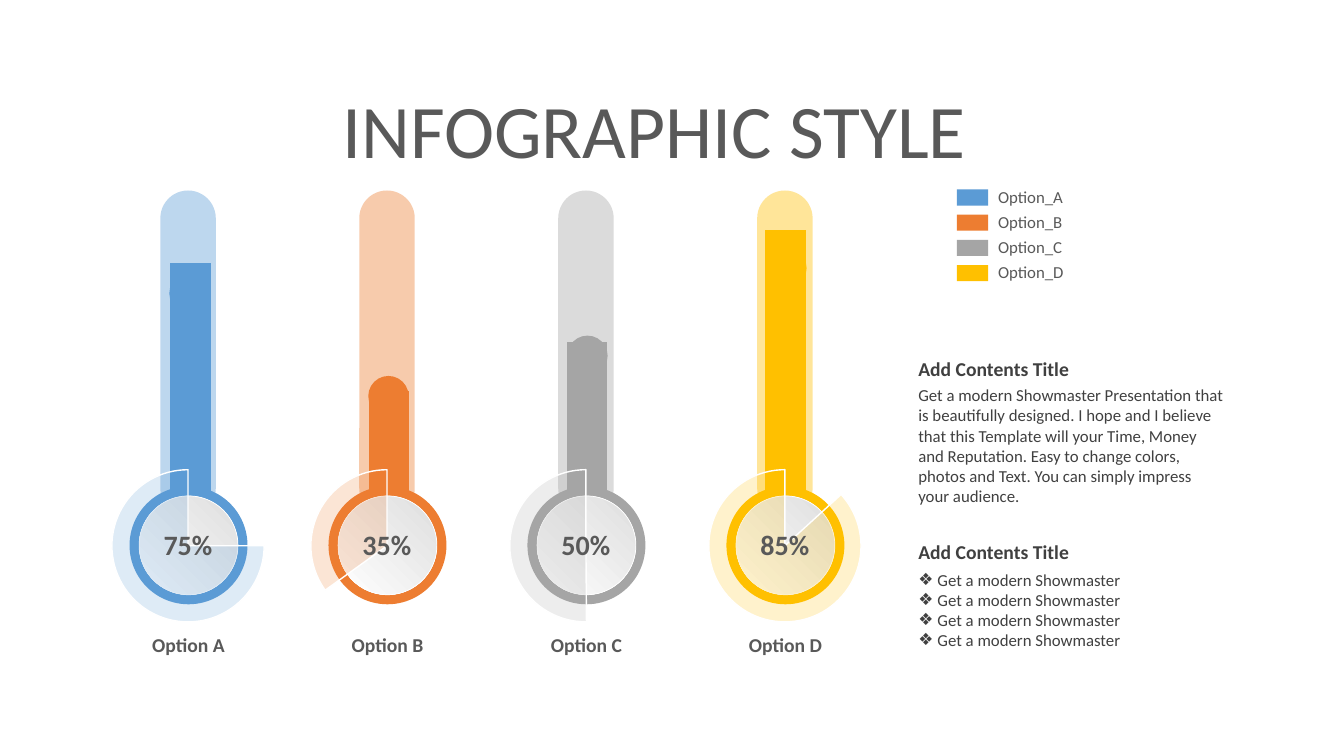
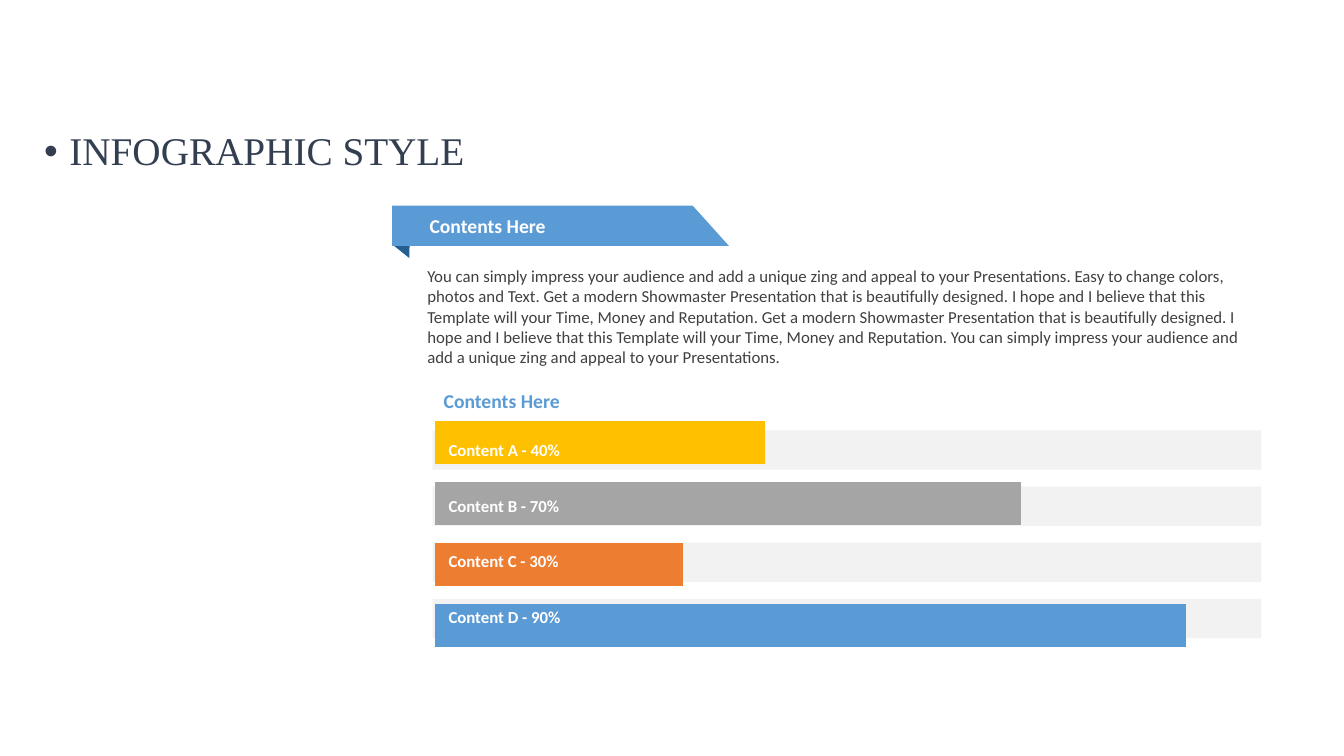
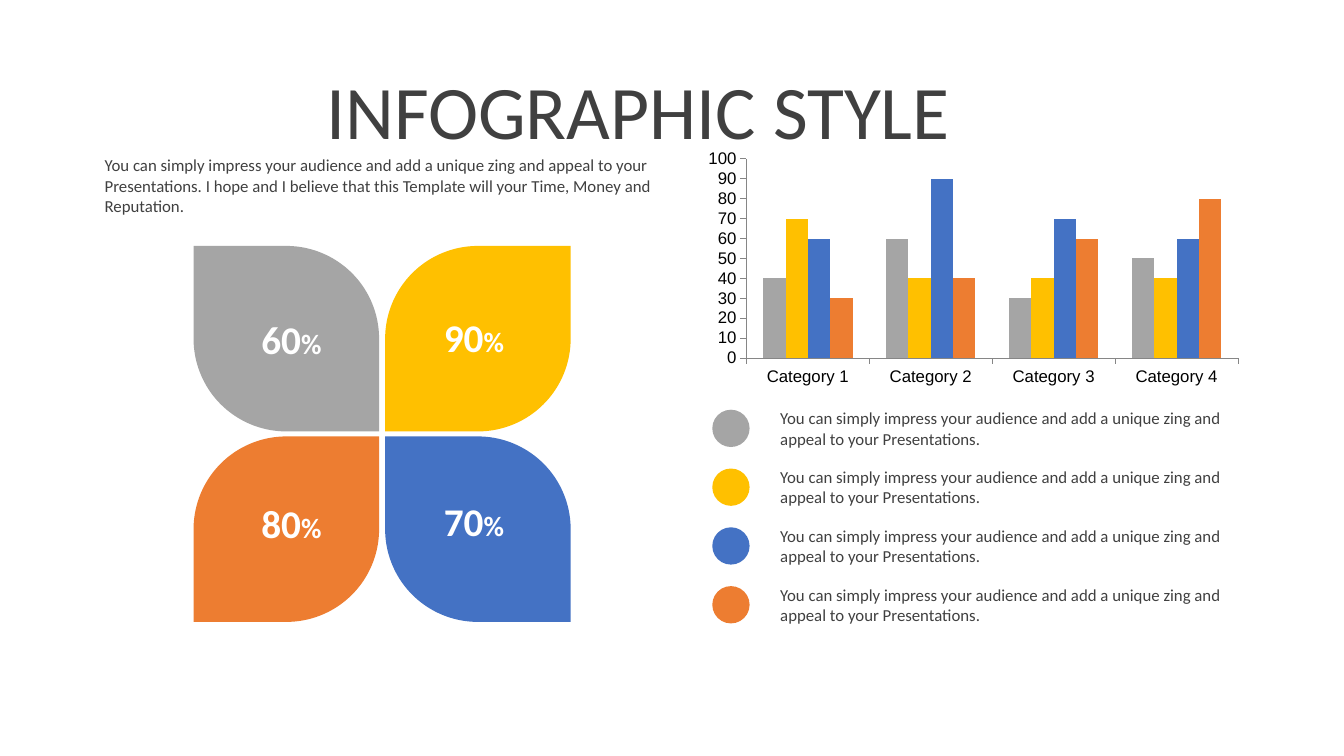
import pptx
import pptx.util
import pptx.chart.data
import pptx.dml.color
import pptx.enum.chart
import pptx.enum.shapes
import pptx.enum.text
import pptx.oxml.ns
from lxml import etree

RGB = pptx.dml.color.RGBColor
BLUE = RGB(0x5B, 0x9B, 0xD5)
ORANGE = RGB(0xED, 0x7D, 0x31)
GRAY = RGB(0xA5, 0xA5, 0xA5)
GOLD = RGB(0xFF, 0xC0, 0x00)
ROYAL = RGB(0x44, 0x72, 0xC4)
NAVY = RGB(0x25, 0x5E, 0x91)
SLATE = RGB(0x33, 0x3F, 0x50)
INK = RGB(0x40, 0x40, 0x40)
SOFT = RGB(0x59, 0x59, 0x59)
PALE = RGB(0xF2, 0xF2, 0xF2)
SILVER = RGB(0xDE, 0xDE, 0xDE)
RULE = RGB(0x86, 0x86, 0x86)
WHITE = RGB(0xFF, 0xFF, 0xFF)
BLACK = RGB(0, 0, 0)

SHAPE = pptx.enum.shapes.MSO_SHAPE
KIND = pptx.enum.chart.XL_CHART_TYPE
ALIGN = pptx.enum.text.PP_ALIGN
ANCHOR = pptx.enum.text.MSO_ANCHOR
inch = pptx.util.Inches
pt = pptx.util.Pt
qn = pptx.oxml.ns.qn

TITLE = "INFOGRAPHIC STYLE"
HEAD = "Add Contents Title"
ITEM = "Get a modern Showmaster"
HERE = "Contents Here"
IMPRESS = "You can simply impress your audience"
ZING = IMPRESS + " and add a unique zing and appeal to your Presentations."
EASY = "Easy to change colors, photos and Text."
MODERN = ITEM + " Presentation that is beautifully designed."
HOPE = "I hope and I believe that this Template will your Time, Money and Reputation."

TUBES = [
    ("A", "75%", BLUE, 88, 0, 2.71),
    ("B", "35%", ORANGE, 41, 144.3, 3.73),
    ("C", "50%", GRAY, 59, 89.6, 3.33),
    ("D", "85%", GOLD, 100, 317.6, 2.46),
]
BARS = [
    ("Content A - 40%", GOLD, 44),
    ("Content B - 70%", GRAY, 78),
    ("Content C - 30%", ORANGE, 33),
    ("Content D - 90%", BLUE, 100),
]
LEAVES = [("60", GRAY, 0, 0), ("90", GOLD, 1, 0), ("80", ORANGE, 0, 1), ("70", ROYAL, 1, 1)]
SERIES = [
    ("Series 1", GRAY, (40, 60, 30, 50)),
    ("Series 2", GOLD, (70, 40, 40, 40)),
    ("Series 3", ROYAL, (60, 90, 70, 60)),
    ("Series 4", ORANGE, (30, 40, 60, 80)),
]

deck = pptx.Presentation()
deck.slide_width, deck.slide_height = inch(13.33), inch(7.5)


def page():
    return deck.slides.add_slide(deck.slide_layouts[6])


def box(at):
    return [inch(n) for n in at]


def spread(first, last, count):
    return [first + (last - first) * i / (count - 1) for i in range(count)]


def text(slide, at, lines, size=12, color=INK, bold=False, center=False,
         middle=False, font="Calibri", bullet=None, indent=0, space=None, left=0.1):
    frame = slide.shapes.add_textbox(*box(at)).text_frame
    frame.word_wrap = True
    frame.margin_left = inch(left)
    frame.vertical_anchor = ANCHOR.MIDDLE if middle else ANCHOR.TOP
    for i, line in enumerate(lines):
        para = frame.paragraphs[0] if i == 0 else frame.add_paragraph()
        para.alignment = ALIGN.CENTER if center else ALIGN.LEFT
        if bullet:
            props = para._p.get_or_add_pPr()
            props.set("marL", str(inch(indent)))
            props.set("indent", str(-inch(indent)))
            etree.SubElement(props, qn("a:buFont")).set("typeface", "Arial")
            etree.SubElement(props, qn("a:buChar")).set("char", bullet)
        if space:
            para.line_spacing = space
        for part, big in ([(line, size)] if isinstance(line, str) else line):
            run = para.add_run()
            run.text = part
            run.font.name, run.font.size = font, pt(big)
            run.font.bold, run.font.color.rgb = bold, color


def paint(form, color, line=0, alpha=None):
    form.shadow.inherit = False
    form.fill.solid()
    form.fill.fore_color.rgb = color
    if alpha:
        tint = form.element.spPr.find(qn("a:solidFill")).find(qn("a:srgbClr"))
        etree.SubElement(tint, qn("a:alpha")).set("val", str(alpha * 1000))
    if line:
        form.line.color.rgb = WHITE
        form.line.width = pt(line)
    else:
        form.line.fill.background()
    return form


def shape(slide, kind, at, color, adjust=(), **style):
    form = slide.shapes.add_shape(kind, *box(at))
    for i, share in enumerate(adjust):
        form.adjustments[i] = share
    return paint(form, color, **style)


def disc(slide, x, y, size, color, **style):
    return shape(slide, SHAPE.OVAL, (x - size / 2, y - size / 2, size, size), color, **style)


def outline(slide, points, color):
    spots = [box(p) for p in points]
    pen = slide.shapes.build_freeform(*spots[0])
    pen.add_line_segments(spots[1:], close=True)
    paint(pen.convert_to_shape(), color)


def chart(slide, kind, at, names, series, gap, top, area, lap=0, tints=()):
    data = pptx.chart.data.CategoryChartData()
    data.categories = names
    for name, _, vals in series:
        data.add_series(name, vals)
    graph = slide.shapes.add_chart(kind, *box(at), data).chart
    graph.has_legend = graph.has_title = False
    graph.font.name, graph.font.size = "Arial", pt(12)
    graph.font.color.rgb = BLACK
    plot = graph.plots[0]
    plot.gap_width, plot.overlap, plot.vary_by_categories = gap, lap, False
    for row, (_, color, _) in zip(plot.series, series):
        row.format.fill.solid()
        row.format.fill.fore_color.rgb = color
        for i, tint in enumerate(tints):
            fill = row.points[i].format.fill
            fill.solid()
            fill.fore_color.rgb = tint
    scale = graph.value_axis
    scale.minimum_scale, scale.maximum_scale, scale.major_unit = 0, top, 10
    for axis in (scale, graph.category_axis):
        axis.has_major_gridlines = False
        axis.visible = not tints
        axis.format.line.color.rgb = RULE
    field = graph.element.find(".//" + qn("c:plotArea"))
    for old in field.findall(qn("c:layout")):
        field.remove(old)
    layout = etree.Element(qn("c:layout"))
    field.insert(0, layout)
    manual = etree.SubElement(layout, qn("c:manualLayout"))
    rules = [("layoutTarget", "inner"), ("xMode", "edge"), ("yMode", "edge")]
    for key, val in rules + list(zip("xywh", area)):
        etree.SubElement(manual, qn("c:" + key)).set("val", str(val))


def gauges():
    slide = page()
    text(slide, (0.16, 0.88, 12.66, 0.79), [TITLE], 54, SOFT, center=True, middle=True)
    mids = spread(1.87, 7.79, len(TUBES))
    keys = spread(1.88, 2.63, len(TUBES))
    for mid, tube in zip(mids, TUBES):
        shape(slide, SHAPE.ROUNDED_RECTANGLE, (mid - 0.28, 1.89, 0.55, 3.23),
              tube[2], [0.5], alpha=40)
    chart(slide, KIND.COLUMN_STACKED, (0.74, 2.08, 8.2, 2.96), list("1234"),
          [("Series 1", BLUE, [t[3] for t in TUBES])], 392, 100,
          (0.02, 0.07, 0.96, 0.91), 100, [t[2] for t in TUBES])
    for mid, y, (key, share, color, _, start, dot) in zip(mids, keys, TUBES):
        disc(slide, mid, 5.41, 1.17, color)
        fill = disc(slide, mid, 5.41, 0.98, WHITE, line=0.5).fill
        fill.gradient()
        fill.gradient_angle = 225
        for stop, tint in zip(fill.gradient_stops, (SILVER, WHITE)):
            stop.color.rgb = tint
        shape(slide, SHAPE.PIE, (mid - 0.76, 4.66, 1.51, 1.51), color,
              [start * 0.6, 162], line=1, alpha=20)
        text(slide, (mid - 0.59, 5.18, 1.17, 0.44), [share], 20, SOFT, True, True)
        text(slide, (mid - 0.67, 6.23, 1.34, 0.34), ["Option " + key], 14, SOFT, True, True)
        disc(slide, mid + 0.01, dot + 0.2, 0.4, color)
        shape(slide, SHAPE.RECTANGLE, (9.49, y, 0.31, 0.16), color)
        text(slide, (9.8, y - 0.08, 1.11, 0.3), ["Option_" + key], 12, SOFT)
    for y in (3.49, 5.31):
        text(slide, (9.01, y, 3.23, 0.34), [HEAD], 14, bold=True)
    text(slide, (9.01, 3.77, 3.23, 1.31), [" ".join((MODERN, HOPE, EASY, IMPRESS + "."))])
    text(slide, (9.01, 5.6, 3.23, 0.91), [ITEM] * 4, bullet="❖", indent=0.19)


def tracks():
    slide = page()
    text(slide, (0.34, 1.26, 12.66, 0.79), [TITLE], 28, SLATE,
         font="Times New Roman", bullet="•", indent=0.25, space=0.9)
    outline(slide, [(4.07, 2.06), (3.9, 2.06), (3.91, 2.44), (4.06, 2.56)], NAVY)
    outline(slide, [(3.89, 2.04), (6.87, 2.04), (7.23, 2.44), (3.89, 2.44)], BLUE)
    rows = spread(4.27, 5.94, len(BARS))
    for y in rows:
        shape(slide, SHAPE.RECTANGLE, (4.29, y, 8.22, 0.39), PALE)
    rise = BARS[::-1]
    chart(slide, KIND.BAR_STACKED, (4.14, 4.04, 8.63, 2.52), list("1234"),
          [("Series 1", INK, [b[2] for b in rise])], 40, 110,
          (0.02, 0.02, 0.95, 0.96), 100, [b[1] for b in rise])
    for y, bar in zip(spread(4.31, 5.97, len(BARS)), BARS):
        text(slide, (4.35, y, 1.71, 0.3), [bar[0]], 12, WHITE, True, middle=True)
    for at, color in (((4.14, 2.03, 2.52, 0.41), WHITE), ((4.28, 3.82, 1.91, 0.31), BLUE)):
        text(slide, at, [HERE], 14, color, True, middle=True, left=0.12)
    text(slide, (4.14, 2.59, 8.54, 1.11),
         [" ".join((ZING, EASY, MODERN, HOPE, MODERN, HOPE, ZING))])


def leaves():
    slide = page()
    text(slide, (0, 0.69, 12.66, 0.79), [TITLE], 54, INK, center=True, middle=True)
    for num, color, col, row in LEAVES:
        bend = [0.5, 0] if col != row else [0, 0.5]
        shape(slide, SHAPE.ROUND_2_DIAG_RECTANGLE,
              (1.92 + 1.9 * col, 2.44 + 1.89 * row, 1.84, 1.84), color, bend)
        text(slide, (2.38 + 1.81 * col, 3.08 - 0.02 * col + 1.82 * row, 1.02, 0.57),
             [[(num, 28), ("%", 20)]], 28, WHITE, True, True, True)
    text(slide, (0.94, 1.49, 5.73, 0.71), [ZING + " " + HOPE])
    chart(slide, KIND.COLUMN_CLUSTERED, (6.91, 1.43, 5.48, 2.44),
          ["Category %d" % n for n in range(1, 5)], SERIES, 150, 100,
          (0.09, 0.06, 0.89, 0.81))
    for y, (_, color, _) in zip(spread(4.25, 6, len(SERIES)), SERIES):
        disc(slide, 7.25, y, 0.37, color)
        text(slide, (7.64, y - 0.25, 4.79, 0.5), [ZING])


def main():
    gauges()
    tracks()
    leaves()
    deck.save("out.pptx")


if __name__ == "__main__":
    main()
